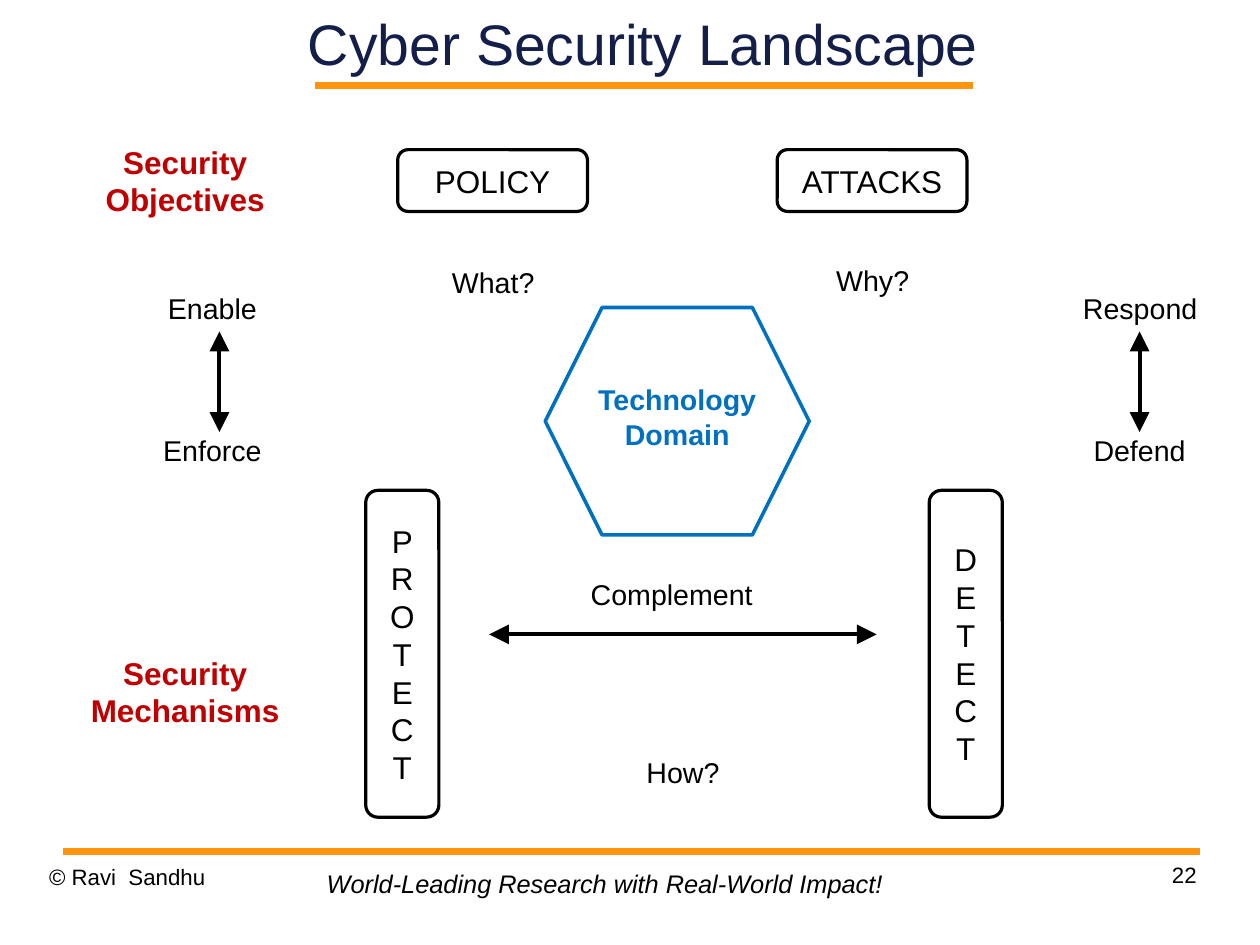
import pptx
import pptx.util
import pptx.dml.color
import pptx.enum.shapes
import pptx.enum.text
import pptx.oxml.ns
import lxml.etree

Inches, Pt = pptx.util.Inches, pptx.util.Pt
SHAPE = pptx.enum.shapes.MSO_SHAPE
ALIGN = pptx.enum.text.PP_ALIGN
ANCHOR = pptx.enum.text.MSO_ANCHOR
FIT = pptx.enum.text.MSO_AUTO_SIZE.SHAPE_TO_FIT_TEXT
qn = pptx.oxml.ns.qn

BLACK, WHITE, NAVY, RED, BLUE, ORANGE = "000000", "FFFFFF", "131F49", "C00000", "0070C0", "FF950E"
BARE = dict(margin_left=0, margin_top=0, margin_right=0, margin_bottom=0, word_wrap=True)
LABEL = dict(word_wrap=False, auto_size=FIT)
BOXED = dict(margin_left=Inches(0.11), margin_right=Inches(0.11), margin_top=Inches(0.06),
             margin_bottom=Inches(0.06), word_wrap=False, vertical_anchor=ANCHOR.MIDDLE)


def rgb(color):
    return pptx.dml.color.RGBColor.from_string(color)


def write(s, text, size, color, frame, align=ALIGN.CENTER, spacing=None, **font):
    tf = s.text_frame
    for name, value in frame.items():
        setattr(tf, name, value)
    for i, line in enumerate(text.split("\n")):
        p = tf.add_paragraph() if i else tf.paragraphs[0]
        p.alignment = align
        p.line_spacing = spacing
        r = p.add_run()
        r.text = line
        r.font.color.rgb = rgb(color)
        for name, value in dict(name="Arial", size=Pt(size), **font).items():
            setattr(r.font, name, value)


# Slide of 28 by 21 cm
prs = pptx.Presentation()
prs.slide_width, prs.slide_height = Inches(28 / 2.54), Inches(21 / 2.54)
slide = prs.slides.add_slide(prs.slide_layouts[6])
shapes = slide.shapes

# Orange rules and double-headed arrows
for x1, y1, x2, y2, color, width, arrow in [
    (2.76, 0.75, 8.51, 0.75, ORANGE, 4.31, False),
    (0.55, 7.45, 10.5, 7.45, ORANGE, 4.31, False),
    (4.28, 5.55, 7.67, 5.55, BLACK, 2.5, True),
    (1.92, 3.78, 1.92, 2.9, BLACK, 2.5, True),
    (9.97, 3.78, 9.97, 2.9, BLACK, 2.5, True),
]:
    s = shapes.add_connector(pptx.enum.shapes.MSO_CONNECTOR.STRAIGHT,
                             Inches(x1), Inches(y1), Inches(x2), Inches(y2))
    s.line.color.rgb = rgb(color)
    s.line.width = Pt(width)
    if arrow:
        for end in ("a:headEnd", "a:tailEnd"):
            lxml.etree.SubElement(s.element.spPr.find(qn("a:ln")), qn(end),
                                  type="triangle", w="lg", len="lg")
    lxml.etree.SubElement(s.element.spPr, qn("a:effectLst"))

# Title and footer
for text, x, y, w, h, size, color, frame, fmt in [
    ("Cyber Security Landscape", 2.41, 0, 6.43, 0.75, 36, NAVY,
     dict(BARE, vertical_anchor=ANCHOR.MIDDLE), {}),
    ("© Ravi  Sandhu", 0.43, 7.55, 2.57, 0.57, 14, BLACK, BARE,
     dict(align=ALIGN.LEFT, spacing=1.01)),
    ("22", 7.9, 7.53, 2.57, 0.57, 14, BLACK, BARE, dict(align=ALIGN.RIGHT, spacing=1.01)),
    ("World-Leading Research with Real-World Impact!", 2.76, 7.55, 5.08, 0.37, 16, BLACK,
     LABEL, dict(align=ALIGN.LEFT, italic=True)),
]:
    s = shapes.add_textbox(Inches(x), Inches(y), Inches(w), Inches(h))
    write(s, text, size, color, frame, **fmt)

# Rounded boxes: objectives and mechanisms, with their red headings
for text, x, y, w, h, color in [
    ("PROTECT", 3.2, 4.29, 0.64, 2.86, BLACK),
    ("DETECT", 8.13, 4.29, 0.64, 2.86, BLACK),
    ("POLICY", 3.48, 1.31, 1.66, 0.54, BLACK),
    ("ATTACKS", 6.8, 1.31, 1.66, 0.54, BLACK),
    ("Security\nObjectives", 0.79, 1.31, 1.66, 0.54, RED),
    ("Security\nMechanisms", 0.79, 5.78, 1.66, 0.54, RED),
]:
    heading = color == RED
    s = shapes.add_shape(SHAPE.ROUNDED_RECTANGLE, Inches(x), Inches(y), Inches(w), Inches(h))
    s.shadow.inherit = False
    s.fill.solid()
    s.fill.fore_color.rgb = rgb(WHITE)
    if heading:
        s.line.fill.background()
    else:
        s.line.color.rgb = rgb(BLACK)
        s.line.width = Pt(2)
    write(s, text, 19.8, color, BOXED, bold=heading)
    if h > w:  # stacked letters
        s.element.txBody.bodyPr.set("vert", "wordArtVert")

# Questions and relations
for text, x, y, w, align in [
    ("Complement", 5.07, 5, 1.63, ALIGN.LEFT),
    ("How?", 5.55, 6.56, 0.85, ALIGN.CENTER),
    ("What?", 3.85, 2.27, 0.93, ALIGN.CENTER),
    ("Why?", 7.21, 2.25, 0.85, ALIGN.CENTER),
    ("Enforce", 1.33, 3.74, 1.07, ALIGN.LEFT),
    ("Enable", 1.37, 2.5, 0.99, ALIGN.LEFT),
    ("Defend", 9.46, 3.74, 1.02, ALIGN.CENTER),
    ("Respond", 9.37, 2.5, 1.21, ALIGN.CENTER),
]:
    s = shapes.add_textbox(Inches(x), Inches(y), Inches(w), Inches(0.4))
    write(s, text, 18, BLACK, LABEL, align)

# Central hexagon, its text slightly above the middle
s = shapes.add_shape(SHAPE.HEXAGON, Inches(4.77), Inches(2.69), Inches(2.31), Inches(1.99))
s.shadow.inherit = False
s.fill.background()
s.line.color.rgb = rgb(BLUE)
s.line.width = Pt(2.25)
write(s, "Technology\nDomain", 18, BLUE,
      dict(word_wrap=True, vertical_anchor=ANCHOR.MIDDLE, margin_bottom=Inches(0.13)), bold=True)

prs.save("out.pptx")
